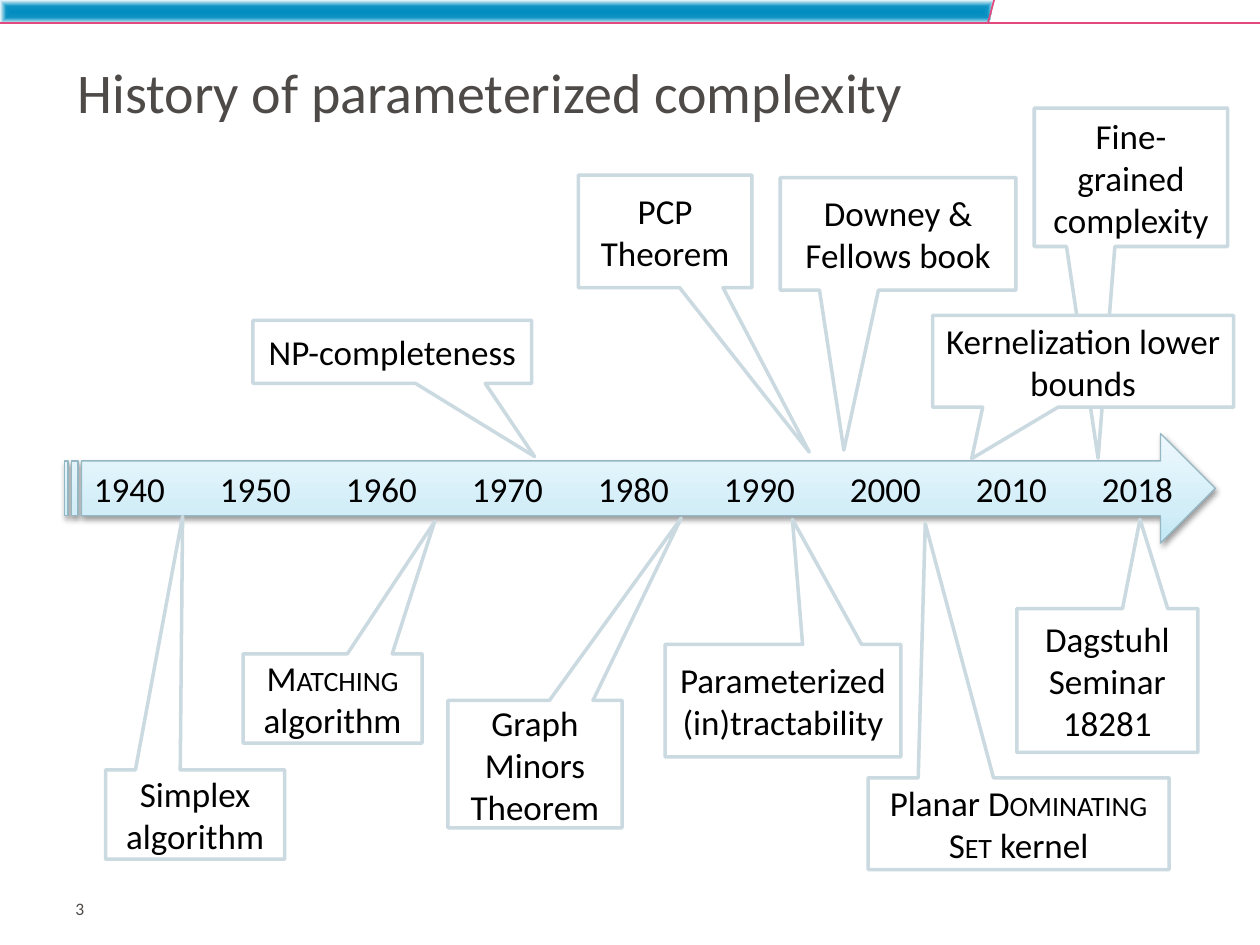
from lxml.etree import SubElement
from pptx import Presentation
from pptx.dml.color import RGBColor
from pptx.enum.shapes import MSO_CONNECTOR as Connector, MSO_SHAPE as Shape
from pptx.enum.text import MSO_ANCHOR as Anchor, PP_ALIGN as Align
from pptx.oxml.ns import qn
from pptx.util import Cm, Pt

FONT = "Calibri"
COLORS = {
    "title": "4E4A48", "text": "000000", "paper": "FFFFFF", "callout": "CADAE0",
    "rule": "E2497F", "arrow": "95B7C4", "shadow": "000000",
}
BAR_STOPS = [(0, "038CC0"), (49, "0F94C4"), (100, "EEF9FD")]
ARROW_STOPS = [(0, "C3E8F6"), (35, "D4EEF8"), (100, "EEF9FD")]

TITLE = "History of parameterized complexity"
YEARS = [1940, 1950, 1960, 1970, 1980, 1990, 2000, 2010, 2018]
PAGE_NUMBER = "3"
BAR_OUTLINE = [(0, 0), (20.04, 0), (19.94, 0.48), (0, 0.48)]
RULES = [(20.04, 0, 19.91, 0.48), (25.4, 0.46, 0, 0.46)]

# Lines of (text, small caps) runs; box in cm; tip as a share of the box size from its centre
CALLOUTS = [
    ([[("Simplex algorithm", False)]], (2.13, 15.52, 3.61, 1.8), (-0.07, -3.34)),
    ([[("Matching", True), (" algorithm", False)]], (4.9, 13.18, 3.61, 1.8), (0.57, -1.98)),
    ([[("NP-completeness", False)]], (5.1, 6.46, 5.62, 1.27), (0.51, 1.66)),
    ([[("Graph Minors Theorem", False)]], (9.03, 14.12, 3.51, 2.57), (0.84, -1.93)),
    ([[("PCP Theorem", False)]], (11.66, 3.53, 3.5, 2.27), (0.83, 1.96)),
    ([[("Parameterized", False)], [("(in)tractability", False)]],
     (13.41, 12.99, 4.75, 2.27), (0.04, -1.61)),
    ([[("Downey & Fellows book", False)]], (15.73, 3.58, 4.75, 2.27), (-0.23, 1.92)),
    ([[("Planar ", False), ("Dominating Set", True), (" kernel", False)]],
     (17.5, 15.68, 6.07, 1.85), (-0.31, -3.27)),
    ([[("Dagstuhl Seminar 18281", False)]], (20.5, 12.27, 3.65, 2.9), (0.18, -1.12)),
    ([[("Fine-grained complexity", False)]], (20.85, 2.18, 3.9, 2.79), (-0.17, 2.03)),
    ([[("Kernelization lower bounds", False)]], (18.8, 6.36, 6.07, 1.85), (-0.37, 1.06)),
]


def rgb(name):
    return RGBColor.from_string(COLORS[name])


def add_span(para, text, size, color, small_caps=False):
    span = para.add_run()
    span.text = text
    span.font.name = FONT
    span.font.size = Pt(size)
    span.font.color.rgb = rgb(color)
    if small_caps:
        span.font._element.set("cap", "small")


def add_label(page, text, box, size, anchor, top_inset):
    frame = page.shapes.add_textbox(*map(Cm, box)).text_frame
    frame.word_wrap = True
    frame.vertical_anchor = anchor
    frame.margin_top = Cm(top_inset)
    add_span(frame.paragraphs[0], text, size, "title")


def fill_gradient(shape, stops, angle=None):
    """Fill along an angle, or from the centre outwards when there is none."""
    shape.fill.gradient()
    grad = shape._element.spPr.find(qn("a:gradFill"))
    for child in list(grad):
        grad.remove(child)
    stop_list = SubElement(grad, qn("a:gsLst"))
    for share, color in stops:
        stop = SubElement(stop_list, qn("a:gs"), pos=str(share * 1000))
        SubElement(stop, qn("a:srgbClr"), val=color)
    if angle is None:
        centre = SubElement(grad, qn("a:path"), path="shape")
        SubElement(centre, qn("a:fillToRect"), dict.fromkeys("ltrb", "50000"))
    else:
        SubElement(grad, qn("a:lin"), ang=str(angle * 60000), scaled="0")


def add_header(page):
    start, *corners = [(Cm(x), Cm(y)) for x, y in BAR_OUTLINE]
    builder = page.shapes.build_freeform(*start)
    builder.add_line_segments(corners, close=True)
    bar = builder.convert_to_shape()
    bar.shadow.inherit = False
    bar.line.fill.background()
    fill_gradient(bar, BAR_STOPS)
    for ends in RULES:
        rule = page.shapes.add_connector(Connector.STRAIGHT, *map(Cm, ends))
        rule.line.color.rgb = rgb("rule")
        rule.line.width = Pt(1)
        SubElement(rule._element.spPr, qn("a:effectLst"))


def add_timeline(page):
    arrow = page.shapes.add_shape(Shape.STRIPED_RIGHT_ARROW, *map(Cm, (1.3, 8.74, 23.2, 2.21)))
    fill_gradient(arrow, ARROW_STOPS, angle=270)
    arrow.line.color.rgb = rgb("arrow")
    arrow.line.width = Pt(0.75)
    arrow.shadow.inherit = False
    effects = arrow._element.spPr.find(qn("a:effectLst"))
    shadow = SubElement(effects, qn("a:outerShdw"), blurRad=str(Pt(3.1)), dist=str(Pt(1.6)),
                        dir=str(90 * 60000), rotWithShape="0")
    color = SubElement(shadow, qn("a:srgbClr"), val=COLORS["shadow"])
    SubElement(color, qn("a:alpha"), val="38000")
    para = arrow.text_frame.paragraphs[0]
    para.alignment = Align.LEFT
    add_span(para, "\t".join(map(str, YEARS)), 20, "text")


def add_callout(page, lines, box, tip):
    callout = page.shapes.add_shape(Shape.RECTANGULAR_CALLOUT, *map(Cm, box))
    callout.adjustments[0], callout.adjustments[1] = tip
    callout.shadow.inherit = False
    callout.fill.solid()
    callout.fill.fore_color.rgb = rgb("paper")
    callout.line.color.rgb = rgb("callout")
    callout.line.width = Pt(2)
    frame = callout.text_frame
    frame.word_wrap = True
    frame.vertical_anchor = Anchor.MIDDLE
    frame.margin_left = frame.margin_right = Cm(0.23)
    para = frame.paragraphs[0]
    para.alignment = Align.CENTER
    for index, spans in enumerate(lines):
        if index:
            para.add_line_break()
        for text, small_caps in spans:
            add_span(para, text, 20, "text", small_caps)


def main():
    deck = Presentation()
    deck.slide_width, deck.slide_height = Cm(25.4), Cm(19.05)
    page = deck.slides.add_slide(deck.slide_layouts[6])
    add_header(page)
    add_label(page, TITLE, (1.31, 0.97, 22.86, 1.75), 32, Anchor.MIDDLE, 0.13)
    add_timeline(page)
    for callout in CALLOUTS:
        add_callout(page, *callout)
    add_label(page, PAGE_NUMBER, (1.27, 18.11, 5.44, 0.76), 10, Anchor.TOP, 0)
    deck.save("out.pptx")


if __name__ == "__main__":
    main()
